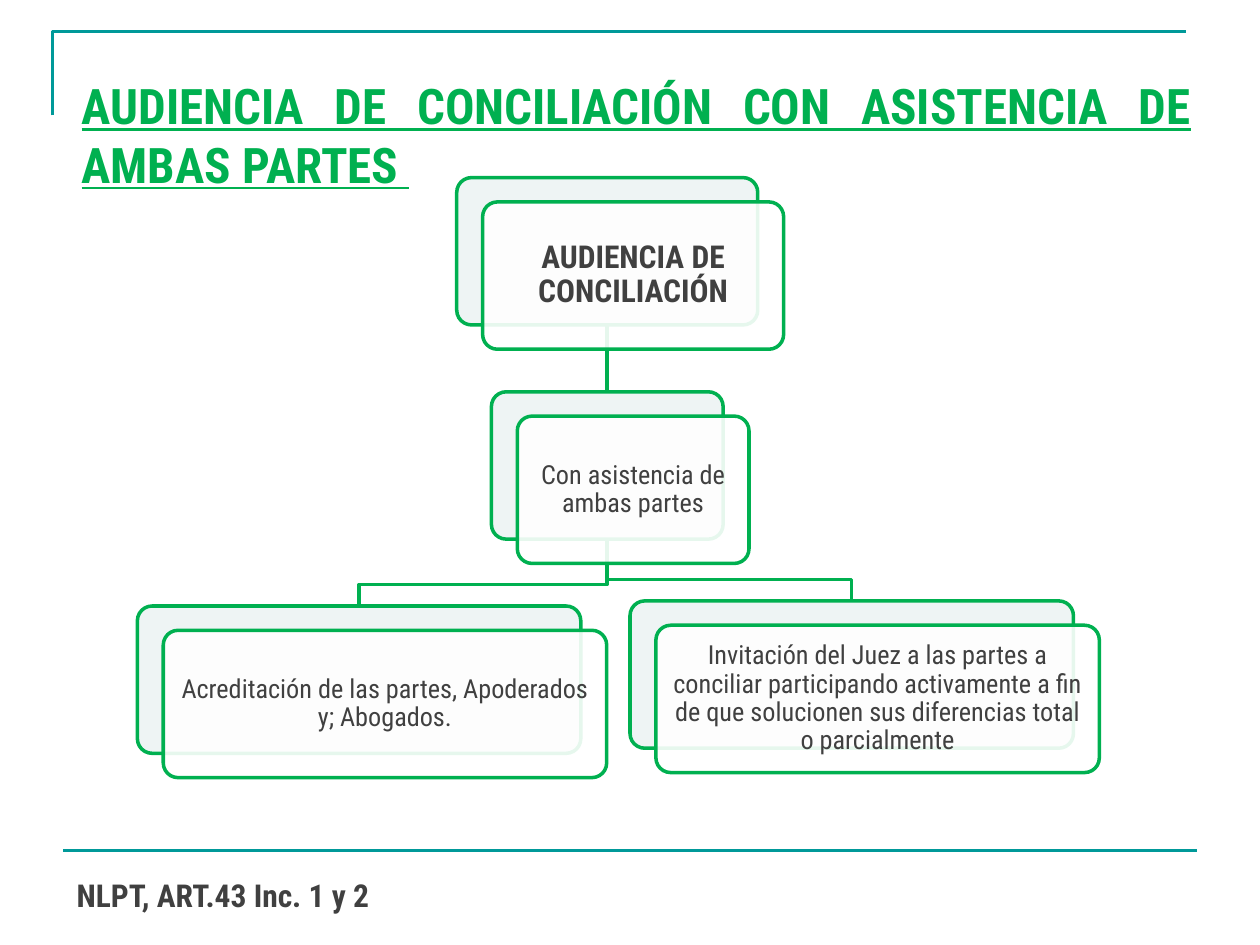
from dataclasses import dataclass

from lxml import etree
from pptx import Presentation
from pptx import util as u
from pptx.dml.color import RGBColor
from pptx.enum import shapes, text
from pptx.oxml.ns import qn


@dataclass(frozen=True)
class Theme:
    """Colours, type and line sizes of the slide."""
    font: str = "Roboto Condensed"
    teal: str = "009999"
    green: str = "00B050"
    ink: str = "404040"
    pale: str = "EEF4F4"
    white: str = "FFFFFF"
    title: int = 28
    head: int = 18
    body: int = 15
    rule: float = 1.5
    edge: float = 2


@dataclass(frozen=True)
class Box:
    """A region in points."""
    x: float
    y: float
    w: float
    h: float

    def inner(self, x, y, w, h):
        """Return a box placed relative to this one."""
        return Box(self.x + x, self.y + y, w, h)

    def emu(self):
        """Return left, top, width and height as lengths."""
        return [u.Pt(v) for v in (self.x, self.y, self.w, self.h)]


T = Theme()
NODE_H, DROP = 84.2, 12.25
SHIFT = (14.8, 13.9)
NODES = [
    (182.5, 0, 172, "AUDIENCIA DE CONCILIACIÓN", T.head, True),
    (202.3, 122.4, 132.4, "Con asistencia de ambas partes", T.body, False),
    (0, 244.8, 253.4, "Acreditación de las partes, Apoderados y; Abogados.",
     T.body, False),
    (281.5, 241.9, 253.4,
     "Invitación del Juez a las partes a conciliar participando activamente "
     "a fin de que solucionen sus diferencias total o parcialmente",
     T.body, False),
]
LINKS = [(1, 3), (1, 2), (0, 1)]


def stroke(line, tint, size):
    """Set the colour and width of a line."""
    line.color.rgb = RGBColor.from_string(tint)
    line.width = u.Pt(size)


def rule(slide, start, end, tint, size):
    """Draw a straight line."""
    ends = [u.Pt(v) for v in (*start, *end)]
    line = slide.shapes.add_connector(shapes.MSO_CONNECTOR.STRAIGHT, *ends)
    stroke(line.line, tint, size)
    etree.SubElement(line.element.spPr, qn("a:effectLst"))


def bend(slide, points, tint, size):
    """Draw an open line through several points."""
    first, *rest = [(u.Pt(x), u.Pt(y)) for x, y in points]
    build = slide.shapes.build_freeform(*first)
    build.add_line_segments(rest, close=False)
    shape = build.convert_to_shape()
    shape.fill.background()
    shape.shadow.inherit = False
    stroke(shape.line, tint, size)


def write(frame, words, size, tint, bold, align):
    """Fill a text frame with one styled paragraph."""
    frame.word_wrap = True
    para = frame.paragraphs[0]
    para.text = words
    para.alignment = align
    para.font.name = T.font
    para.font.size = u.Pt(size)
    para.font.bold = bold
    para.font.color.rgb = RGBColor.from_string(tint)
    return para


def label(slide, box, words, size, tint, align):
    """Place a bold text box."""
    frame = slide.shapes.add_textbox(*box.emu()).text_frame
    return write(frame, words, size, tint, True, align)


def card(slide, box, tint, alpha=None):
    """Draw one rounded card, see-through if alpha is given."""
    shape = slide.shapes.add_shape(
        shapes.MSO_SHAPE.ROUNDED_RECTANGLE, *box.emu())
    shape.adjustments[0] = 0.1
    shape.shadow.inherit = False
    shape.fill.solid()
    shape.fill.fore_color.rgb = RGBColor.from_string(tint)
    stroke(shape.line, T.green, T.edge)
    if alpha:
        tone = shape.element.spPr.find(qn("a:solidFill"))[0]
        etree.SubElement(tone, qn("a:alpha"), val=str(alpha * 1000))
    return shape


def node(slide, box, words, size, bold):
    """Draw a back card and a shifted front card with text."""
    card(slide, box, T.pale)
    front = card(slide, box.inner(*SHIFT, box.w, box.h), T.white, 90)
    frame = front.text_frame
    frame.vertical_anchor = text.MSO_ANCHOR.MIDDLE
    frame.margin_left = frame.margin_right = u.Pt(size * 0.3)
    frame.margin_top = frame.margin_bottom = u.Pt(size * 0.3)
    para = write(frame, words, size, T.ink, bold, text.PP_ALIGN.CENTER)
    para.line_spacing = 0.9


def link(slide, top, low):
    """Join the foot of one card to the head of another."""
    start = (top.x + top.w / 2, top.y + top.h)
    end = (low.x + low.w / 2, low.y)
    if abs(start[0] - end[0]) < 1:
        rule(slide, start, end, T.green, T.edge)
    else:
        turn = low.y - DROP
        bend(slide, [start, (start[0], turn), (end[0], turn), end],
             T.green, T.edge)


def tree(slide, box):
    """Draw the links and cards of the hearing chart."""
    cells = [box.inner(x, y, w, NODE_H) for x, y, w, *_ in NODES]
    for top, low in LINKS:
        link(slide, cells[top], cells[low])
    for cell, (*_, words, size, bold) in zip(cells, NODES):
        node(slide, cell, words, size, bold)


def header(slide, box):
    """Draw the corner line and the title."""
    bend(slide, [(box.x, box.y + 48), (box.x, box.y),
                 (box.x + box.w, box.y)], T.teal, T.rule)
    para = label(slide, box.inner(9.6, 21.6, 648, 90),
                 "AUDIENCIA DE CONCILIACIÓN CON ASISTENCIA DE AMBAS PARTES ",
                 T.title, T.green, text.PP_ALIGN.JUSTIFY)
    para.font.underline = True


def footer(slide, box):
    """Draw the bottom rule and the legal reference."""
    rule(slide, (box.x, box.y), (box.x + box.w, box.y), T.teal, T.rule)
    label(slide, box.inner(0.7, 10.8, 453.6, 61.2), "NLPT, ART.43 Inc. 1 y 2",
          T.head, T.ink, text.PP_ALIGN.LEFT)


def main():
    """Build and save the slide."""
    deck = Presentation()
    deck.slide_width, deck.slide_height = u.Pt(720), u.Pt(540)
    slide = deck.slides.add_slide(deck.slide_layouts[6])
    header(slide, Box(30, 18, 648, 112))
    footer(slide, Box(36, 486, 648, 54))
    tree(slide, Box(78.5, 101.5, 550, 343))
    deck.save("out.pptx")


if __name__ == "__main__":
    main()
